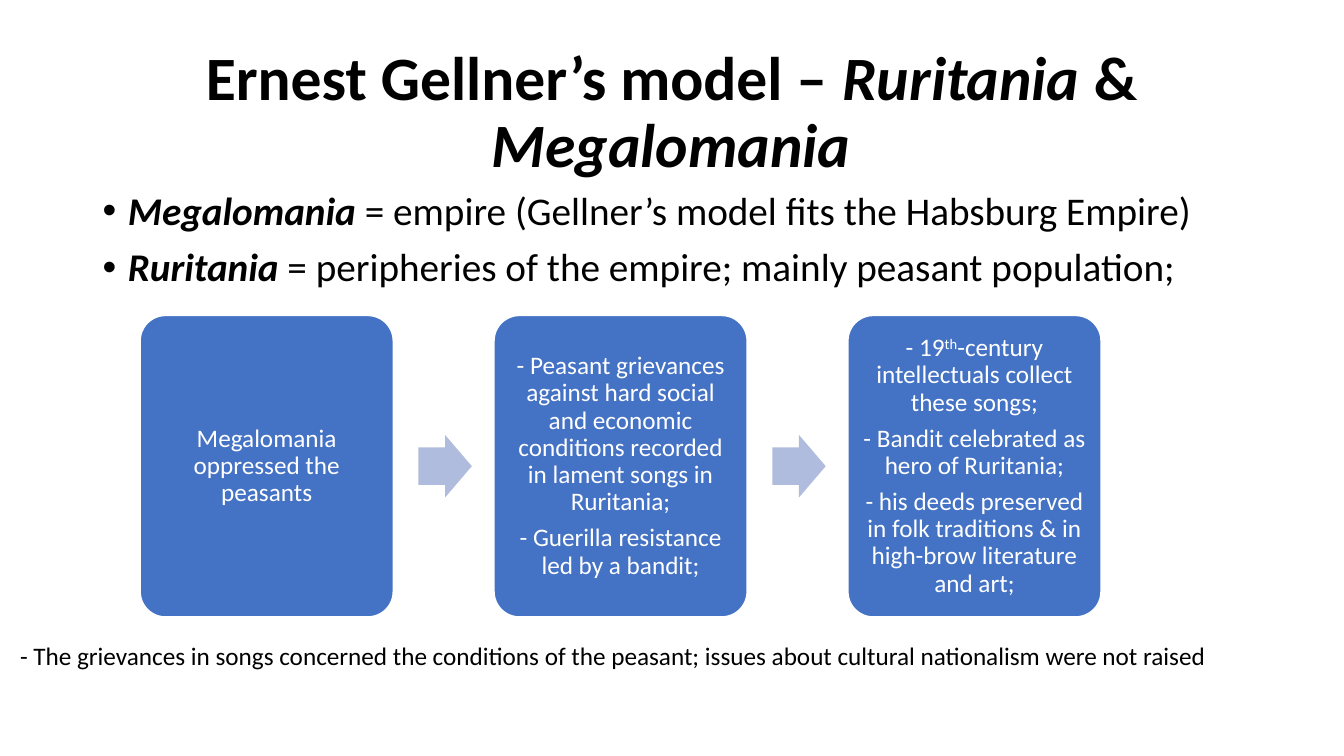
from dataclasses import dataclass

from lxml.etree import SubElement
from pptx import Presentation
from pptx.dml.color import RGBColor
from pptx.enum.shapes import MSO_SHAPE as Shape
from pptx.enum.text import MSO_ANCHOR as Anchor, PP_ALIGN as Align
from pptx.oxml.ns import qn
from pptx.util import Inches, Pt


@dataclass(frozen=True)
class Theme:
    font: str = "Calibri"
    ink: RGBColor = RGBColor(0x00, 0x00, 0x00)
    paper: RGBColor = RGBColor(0xFF, 0xFF, 0xFF)
    card: RGBColor = RGBColor(0x44, 0x72, 0xC4)
    arrow: RGBColor = RGBColor(0xB0, 0xBC, 0xDE)
    title_size: int = 44
    body_size: int = 28
    small_size: int = 18


TITLE = [("Ernest Gellner’s model – ", "b"), ("Ruritania", "bi"), (" & ", "b"), ("Megalomania", "bi")]
DEFINITIONS = [
    [("Megalomania", "bi"), (" = empire (Gellner’s model fits the Habsburg Empire)", "")],
    [("Ruritania", "bi"), (" = peripheries of the empire; mainly peasant population;", "")],
]
STAGES = [
    [[("Megalomania oppressed the peasants", "")]],
    [
        [("- Peasant grievances against hard social and economic conditions "
          "recorded in lament songs in Ruritania;", "")],
        [("- Guerilla resistance led by a bandit;", "")],
    ],
    [
        [("- 19", ""), ("th", "^"), ("-century intellectuals collect these songs;", "")],
        [("- Bandit celebrated as hero of Ruritania;", "")],
        [("- his deeds preserved in folk traditions & in high-brow literature and art;", "")],
    ],
]
FOOTNOTE = [("- The grievances in songs concerned the conditions of the peasant; "
             "issues about cultural nationalism were not raised", "")]

CARD_LEFT, CARD_TOP, CARD_WIDTH, CARD_HEIGHT = 1.39, 3.13, 2.51, 2.99
CARD_PITCH = 3.51
ARROW_OFFSET, ARROW_WIDTH, ARROW_HEIGHT = 2.76, 0.53, 0.62


class SlideBuilder:
    def __init__(self, slide, theme):
        self.slide = slide
        self.theme = theme

    def fill_text(self, frame, paragraphs, size, color, align=Align.LEFT, spacing=0.9, before=0, after=0):
        """Fill a frame; run marks are b for bold, i for italic, ^ for superscript."""
        frame.word_wrap = True
        for index, runs in enumerate(paragraphs):
            paragraph = frame.add_paragraph() if index else frame.paragraphs[0]
            paragraph.alignment = align
            paragraph.line_spacing = spacing
            paragraph.space_before, paragraph.space_after = Pt(before), Pt(after)
            for text, marks in runs:
                run = paragraph.add_run()
                run.text = text
                run.font.name = self.theme.font
                run.font.size = Pt(size)
                run.font.color.rgb = color
                run.font.bold = "b" in marks
                run.font.italic = "i" in marks
                if "^" in marks:
                    run._r.get_or_add_rPr().set("baseline", "30000")

    def text(self, left, top, width, height, paragraphs, size, anchor=Anchor.TOP, **style):
        box = self.slide.shapes.add_textbox(Inches(left), Inches(top), Inches(width), Inches(height))
        box.text_frame.vertical_anchor = anchor
        self.fill_text(box.text_frame, paragraphs, size, self.theme.ink, **style)
        return box

    def bullets(self, left, top, width, height, paragraphs):
        box = self.text(left, top, width, height, paragraphs, self.theme.body_size, before=10)
        for paragraph in box.text_frame.paragraphs:
            properties = paragraph._p.get_or_add_pPr()
            properties.set("marL", str(Inches(0.25)))
            properties.set("indent", str(Inches(-0.25)))
            SubElement(properties, qn("a:buFont"), typeface="Arial")
            SubElement(properties, qn("a:buChar"), char="•")

    def shape(self, kind, left, top, width, height, fill, adjustments):
        shape = self.slide.shapes.add_shape(kind, Inches(left), Inches(top), Inches(width), Inches(height))
        shape.shadow.inherit = False
        shape.fill.solid()
        shape.fill.fore_color.rgb = fill
        shape.line.fill.background()
        for index, value in enumerate(adjustments):
            shape.adjustments[index] = value
        return shape

    def card(self, left, paragraphs):
        card = self.shape(Shape.ROUNDED_RECTANGLE, left, CARD_TOP, CARD_WIDTH, CARD_HEIGHT,
                          self.theme.card, [0.1])
        card.line.color.rgb = self.theme.paper
        card.line.width = Pt(1)
        frame = card.text_frame
        frame.margin_left = frame.margin_right = frame.margin_top = frame.margin_bottom = Inches(0.07)
        frame.vertical_anchor = Anchor.MIDDLE
        self.fill_text(frame, paragraphs, self.theme.small_size, self.theme.paper,
                       align=Align.CENTER, after=6.3)

    def arrow(self, left):
        top = CARD_TOP + (CARD_HEIGHT - ARROW_HEIGHT) / 2
        self.shape(Shape.RIGHT_ARROW, left, top, ARROW_WIDTH, ARROW_HEIGHT, self.theme.arrow, [0.6, 0.5])


def main():
    presentation = Presentation()
    presentation.slide_width, presentation.slide_height = Inches(13.33), Inches(7.5)
    theme = Theme()
    builder = SlideBuilder(presentation.slides.add_slide(presentation.slide_layouts[6]), theme)

    builder.text(0.29, 0.41, 12.74, 1.44, [TITLE], theme.title_size,
                 anchor=Anchor.MIDDLE, align=Align.CENTER)
    builder.bullets(0.92, 1.85, 11.84, 1.2, DEFINITIONS)
    for index, stage in enumerate(STAGES):
        left = CARD_LEFT + index * CARD_PITCH
        builder.card(left, stage)
        if index < len(STAGES) - 1:
            builder.arrow(left + ARROW_OFFSET)
    builder.text(0.1, 6.3, 13.08, 0.4, [FOOTNOTE], theme.small_size, spacing=1.0)

    presentation.save("out.pptx")


if __name__ == "__main__":
    main()
